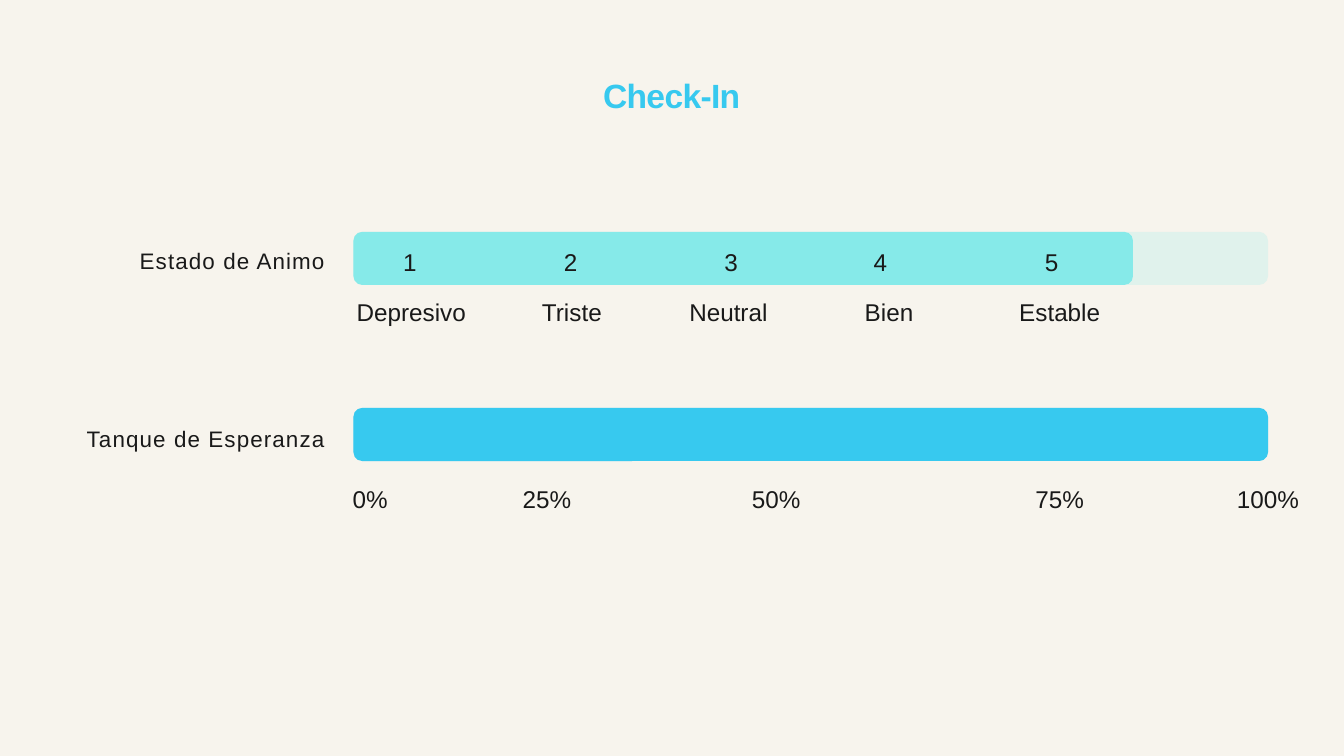
from dataclasses import dataclass

from lxml import etree
from pptx import Presentation
from pptx import util as u
from pptx.dml.color import RGBColor
from pptx.enum import shapes, text
from pptx.oxml.ns import qn


@dataclass(frozen=True)
class Theme:
    font: str = "Arial"
    background: str = "F7F4ED"
    ink: str = "191919"
    mood: str = "86EAE9"
    hope: str = "37C9EF"
    title_size: float = 36
    label_size: float = 24
    scale_size: float = 26


THEME = Theme()
MARGIN = 1.12
BAR_LEFT, BAR_WIDTH, BAR_HEIGHT = 5.26, 13.61, 0.79
BAR_RADIUS = 0.13
MOOD_TOP, HOPE_TOP = 3.45, 6.07
MOOD_FILLED = 11.6
MARK_WIDTH = 1.68

# Left edge and wording of each mark
MOOD_NUMBERS = [(5.26, "1"), (7.65, "2"), (10.04, "3"), (12.26, "4"), (14.81, "5")]
MOOD_NAMES = [(5.28, "Depresivo"), (7.67, "Triste"), (10, "Neutral"),
              (12.39, "Bien"), (14.93, "Estable")]
HOPE_ENDS_AND_MIDDLE = [(4.67, "0%"), (10.71, "50%"), (18.03, "100%")]
HOPE_QUARTERS = [(7.3, "25%"), (14.93, "75%")]


def add_text(slide, wording, left, top, width, height, size, line_spacing,
             align=text.PP_ALIGN.CENTER, color=THEME.ink, bold=False, tracking=0):
    """Add one line of text; tracking is letter spacing in points."""
    box = slide.shapes.add_textbox(*map(u.Inches, (left, top, width, height)))
    frame = box.text_frame
    frame.margin_left = frame.margin_right = frame.margin_top = frame.margin_bottom = 0
    frame.word_wrap = True
    frame.auto_size = text.MSO_AUTO_SIZE.SHAPE_TO_FIT_TEXT
    frame.text = wording
    line = frame.paragraphs[0]
    line.alignment = align
    line.line_spacing = u.Pt(line_spacing)
    run = line.runs[0]
    run.font.name = THEME.font
    run.font.size = u.Pt(size)
    run.font.bold = bold
    run.font.color.rgb = RGBColor.from_string(color)
    if tracking:
        run.font._element.set("spc", str(round(tracking * 100)))


def add_bar(slide, top, width, color, opacity=100):
    bar = slide.shapes.add_shape(
        shapes.MSO_SHAPE.ROUNDED_RECTANGLE,
        *map(u.Inches, (BAR_LEFT, top, width, BAR_HEIGHT)))
    bar.adjustments[0] = BAR_RADIUS / BAR_HEIGHT
    bar.shadow.inherit = False
    bar.line.fill.background()
    bar.fill.solid()
    bar.fill.fore_color.rgb = RGBColor.from_string(color)
    if opacity < 100:
        fill_color = bar._element.spPr.find(qn("a:solidFill")).find(qn("a:srgbClr"))
        etree.SubElement(fill_color, qn("a:alpha")).set("val", str(opacity * 1000))


def add_gauge(slide, top, filled, color):
    """Add a pale full-length track and the filled part over it."""
    add_bar(slide, top, BAR_WIDTH, color, opacity=20)
    add_bar(slide, top, filled, color)


def add_row_label(slide, wording, top):
    add_text(slide, wording, MARGIN, top, 3.71, 0.47, THEME.label_size, 36,
             align=text.PP_ALIGN.RIGHT, tracking=1.2)


def add_marks(slide, marks, top, height=0.49):
    for left, wording in marks:
        add_text(slide, wording, left, top, MARK_WIDTH, height, THEME.scale_size, 36.4)


def main():
    deck = Presentation()
    deck.slide_width, deck.slide_height = u.Inches(20), u.Inches(11.25)
    slide = deck.slides.add_slide(deck.slide_layouts[6])
    slide.background.fill.solid()
    slide.background.fill.fore_color.rgb = RGBColor.from_string(THEME.background)

    add_text(slide, "Check-In", MARGIN, 1.16, 17.75, 0.57, THEME.title_size, 39.6,
             color=THEME.hope, bold=True, tracking=-0.7)

    add_row_label(slide, "Estado de Animo", 3.58)
    add_gauge(slide, MOOD_TOP, MOOD_FILLED, THEME.mood)
    add_marks(slide, MOOD_NUMBERS, 3.6, height=0.47)
    add_marks(slide, MOOD_NAMES, 4.35)

    add_row_label(slide, "Tanque de Esperanza", 6.23)
    add_gauge(slide, HOPE_TOP, BAR_WIDTH, THEME.hope)
    add_marks(slide, HOPE_ENDS_AND_MIDDLE, 7.13)
    add_marks(slide, HOPE_QUARTERS, 7.14)

    deck.save("out.pptx")


if __name__ == "__main__":
    main()
